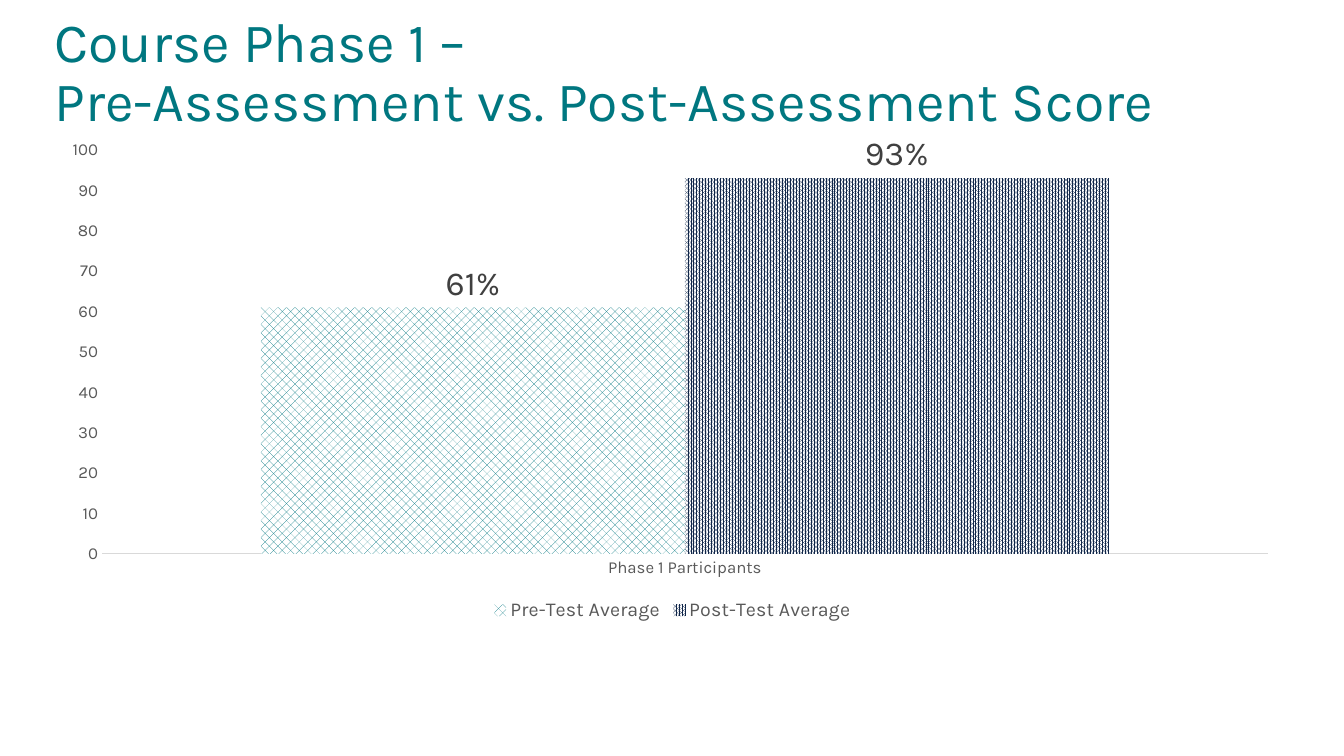
from lxml import etree
from pptx import Presentation
from pptx.chart.data import CategoryChartData
from pptx.dml.color import RGBColor
from pptx.enum.chart import XL_CHART_TYPE, XL_LABEL_POSITION, XL_LEGEND_POSITION, XL_TICK_MARK
from pptx.enum.dml import MSO_PATTERN
from pptx.enum.text import MSO_ANCHOR, MSO_AUTO_SIZE, PP_ALIGN
from pptx.oxml.ns import qn
from pptx.util import Inches, Pt

COLUMNS = XL_CHART_TYPE.COLUMN_CLUSTERED
OUTSIDE_END = XL_LABEL_POSITION.OUTSIDE_END
BOTTOM = XL_LEGEND_POSITION.BOTTOM
NO_TICK = XL_TICK_MARK.NONE
WEAVE = MSO_PATTERN.WEAVE
DENSE_DOTS = MSO_PATTERN.PERCENT_80
MIDDLE = MSO_ANCHOR.MIDDLE
NO_AUTOFIT = MSO_AUTO_SIZE.NONE
LEFT = PP_ALIGN.LEFT

FONT = "Karla"
COLORS = {
    "teal": "007780",
    "navy": "102649",
    "white": "FFFFFF",
    "axis_text": "595959",
    "label_text": "404040",
    "axis_line": "D9D9D9",
}
SCORES = [
    ("Pre-Test Average", 61, WEAVE, "teal"),
    ("Post-Test Average", 93, DENSE_DOTS, "navy"),
]
PLOT_LAYOUT = {"x": 0.04, "y": 0.04, "w": 0.94, "h": 0.815}


def rgb(name):
    """Return the named colour."""
    return RGBColor.from_string(COLORS[name])


def style_font(font, size, color):
    """Set the typeface, size and colour of a font."""
    font.name = FONT
    font.size = Pt(size)
    font.bold = False
    font.color.rgb = rgb(color)


def place_plot(chart):
    """Fix the inner plot area as fractions of the chart."""
    plot_area = chart.plots[0]._element.getparent()
    for old_layout in plot_area.findall(qn("c:layout")):
        plot_area.remove(old_layout)
    layout = etree.Element(qn("c:layout"))
    plot_area.insert(0, layout)
    manual = etree.SubElement(layout, qn("c:manualLayout"))
    settings = {"layoutTarget": "inner", "xMode": "edge", "yMode": "edge", **PLOT_LAYOUT}
    for tag, value in settings.items():
        etree.SubElement(manual, qn(f"c:{tag}")).set("val", str(value))


def add_title(slide, left, top, width, height):
    """Fill the title placeholder within its box."""
    title = slide.shapes.title
    title.left, title.top, title.width, title.height = left, top, width, height
    frame = title.text_frame
    frame.word_wrap = True
    frame.auto_size = NO_AUTOFIT
    frame.vertical_anchor = MIDDLE
    heading = frame.paragraphs[0]
    heading.text = "Course Phase 1 – \vPre-Assessment vs. Post-Assessment Score"
    heading.alignment = LEFT
    heading.line_spacing = 0.9
    style_font(heading.font, 39.6, "teal")


def style_axes(chart):
    """Format the score and participant axes."""
    for axis in (chart.category_axis, chart.value_axis):
        axis.major_tick_mark = axis.minor_tick_mark = NO_TICK
        axis.has_major_gridlines = False
        style_font(axis.tick_labels.font, 12, "axis_text")
    baseline = chart.category_axis.format.line
    baseline.color.rgb = rgb("axis_line")
    baseline.width = Pt(0.75)
    scores = chart.value_axis
    scores.minimum_scale, scores.maximum_scale, scores.major_unit = 0, 100, 10
    scores.format.line.fill.background()


def add_score_chart(slide, left, top, width, height):
    """Draw the average scores as patterned columns."""
    averages = CategoryChartData()
    averages.categories = ["Phase 1 Participants"]
    for name, score, _, _ in SCORES:
        averages.add_series(name, [score])
    chart = slide.shapes.add_chart(COLUMNS, left, top, width, height, averages).chart
    chart.has_title = False
    chart.font.name = FONT
    chart.font.size = Pt(10)
    place_plot(chart)
    style_axes(chart)

    chart.has_legend = True
    chart.legend.position = BOTTOM
    chart.legend.include_in_layout = False
    style_font(chart.legend.font, 14, "axis_text")

    columns = chart.plots[0]
    columns.gap_width = 75
    columns.overlap = 0
    columns.vary_by_categories = False
    for series, (_, _, pattern, color) in zip(columns.series, SCORES):
        fill = series.format.fill
        fill.patterned()
        fill.pattern = pattern
        fill.fore_color.rgb = rgb(color)
        fill.back_color.rgb = rgb("white")
        series.invert_if_negative = False
        labels = series.data_labels
        labels.show_value = True
        labels.number_format = '0"%"'
        labels.number_format_is_linked = False
        labels.position = OUTSIDE_END
        style_font(labels.font, 24, "label_text")


def main():
    """Build and save the assessment slide."""
    deck = Presentation()
    deck.slide_width, deck.slide_height = Inches(13.33), Inches(7.5)
    slide = deck.slides.add_slide(deck.slide_layouts[5])
    add_title(slide, Inches(0.44), Inches(0.15), Inches(12.66), Inches(1.17))
    add_score_chart(slide, Inches(0.52), Inches(1.29), Inches(12.3), Inches(4.92))
    deck.save("out.pptx")


if __name__ == "__main__":
    main()
